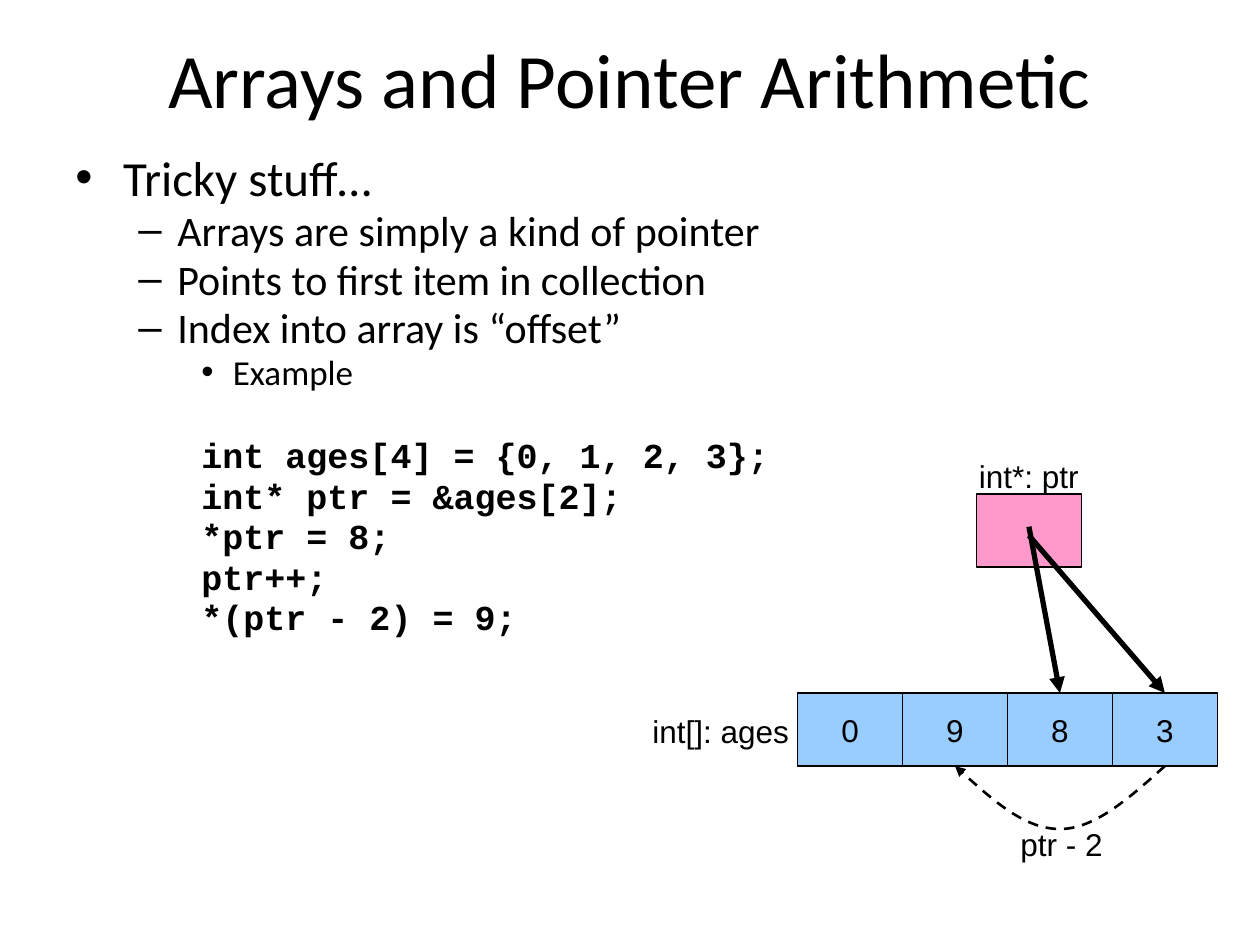
import pptx
import pptx.util
import pptx.dml.color
import pptx.enum.dml
import pptx.enum.shapes
import pptx.enum.text
import pptx.oxml
import pptx.oxml.ns

Inches = pptx.util.Inches
Pt = pptx.util.Pt
qn = pptx.oxml.ns.qn
ALIGN = pptx.enum.text.PP_ALIGN
ANCHOR = pptx.enum.text.MSO_ANCHOR

BLACK = pptx.dml.color.RGBColor(0x00, 0x00, 0x00)
BLUE = pptx.dml.color.RGBColor(0x99, 0xCC, 0xFF)
PINK = pptx.dml.color.RGBColor(0xFF, 0x99, 0xCC)

TITLE_FONT = {"name": "Calibri", "size": Pt(44)}
DIAGRAM_FONT = {"name": "Arial", "size": Pt(18)}
CODE_FONT = {"name": "Courier New", "size": Pt(20), "bold": True}

# Per level: left margin, hanging indent, bullet, font
LEVELS = [
    (0.38, 0.38, "•", {"name": "Calibri", "size": Pt(28)}),
    (0.81, 0.31, "–", {"name": "Calibri", "size": Pt(24)}),
    (1.25, 0.25, "•", {"name": "Calibri", "size": Pt(20)}),
]
POINTS = [
    (0, "Tricky stuff…"),
    (1, "Arrays are simply a kind of pointer"),
    (1, "Points to first item in collection"),
    (1, "Index into array is “offset”"),
    (2, "Example"),
]
CODE = [
    "int ages[4] = {0, 1, 2, 3};",
    "int* ptr = &ages[2];",
    "*ptr = 8;",
    "ptr++;",
    "*(ptr - 2) = 9;",
]
AGES = ["0", "9", "8", "3"]
CELL_WIDTH, CELL_HEIGHT = 0.833, 0.58


def add_run(paragraph, text, font_format):
    run = paragraph.add_run()
    run.text = text
    run.font.color.rgb = BLACK
    for attribute, value in font_format.items():
        setattr(run.font, attribute, value)


def add_frame(slide, left, top, width, height):
    frame = slide.shapes.add_textbox(
        Inches(left), Inches(top), Inches(width), Inches(height)).text_frame
    frame.word_wrap = True
    return frame


def add_title(slide, left, top, width, height):
    frame = add_frame(slide, left, top, width, height)
    frame.vertical_anchor = ANCHOR.MIDDLE
    frame.paragraphs[0].alignment = ALIGN.CENTER
    add_run(frame.paragraphs[0], "Arrays and Pointer Arithmetic", TITLE_FONT)


def format_outline(paragraph, level, bulleted):
    """Set the indent, spacing and bullet of one outline paragraph."""
    margin, hanging, bullet, _ = LEVELS[level]
    paragraph.level = level
    paragraph.line_spacing = 0.8
    properties = paragraph._p.get_or_add_pPr()
    properties.set("marL", str(Inches(margin)))
    properties.set("indent", str(-Inches(hanging)))
    spacing = pptx.oxml.ns.nsdecls("a")
    properties.append(pptx.oxml.parse_xml(
        f'<a:spcBef {spacing}><a:spcPct val="20000"/></a:spcBef>'))
    if bulleted:
        properties.append(pptx.oxml.parse_xml(
            f'<a:buFont {spacing} typeface="Arial"/>'))
        properties.append(pptx.oxml.parse_xml(
            f'<a:buChar {spacing} char="{bullet}"/>'))
    else:
        properties.append(pptx.oxml.parse_xml(f'<a:buNone {spacing}/>'))


def add_outline(slide, left, top, width, height):
    frame = add_frame(slide, left, top, width, height)
    lines = [(level, text, LEVELS[level][3], True) for level, text in POINTS]
    lines += [(2, text, CODE_FONT, False) for text in CODE]
    for index, (level, text, font_format, bulleted) in enumerate(lines):
        paragraph = frame.add_paragraph() if index else frame.paragraphs[0]
        format_outline(paragraph, level, bulleted)
        add_run(paragraph, text, font_format)
        if index == len(POINTS):
            paragraph.space_before = Pt(28)


def add_label(slide, left, top, width, text):
    frame = add_frame(slide, left, top, width, 0.4)
    add_run(frame.paragraphs[0], text, DIAGRAM_FONT)


def add_cell(slide, left, top, fill, text=""):
    cell = slide.shapes.add_shape(
        pptx.enum.shapes.MSO_SHAPE.RECTANGLE,
        Inches(left), Inches(top), Inches(CELL_WIDTH), Inches(CELL_HEIGHT))
    cell.shadow.inherit = False
    cell.fill.solid()
    cell.fill.fore_color.rgb = fill
    cell.line.color.rgb = BLACK
    cell.line.width = Pt(0.75)
    if text:
        cell.text_frame.word_wrap = False
        cell.text_frame.vertical_anchor = ANCHOR.MIDDLE
        cell.text_frame.paragraphs[0].alignment = ALIGN.CENTER
        add_run(cell.text_frame.paragraphs[0], text, DIAGRAM_FONT)
    return cell


def style_arrow(line, width):
    line.color.rgb = BLACK
    line.width = Pt(width)
    line._get_or_add_ln().append(pptx.oxml.parse_xml(
        f'<a:tailEnd {pptx.oxml.ns.nsdecls("a")} type="triangle"/>'))


def add_pointer(slide, x, y, target):
    """Draw an arrow from a point to the top of the target cell."""
    arrow = slide.shapes.add_connector(
        pptx.enum.shapes.MSO_CONNECTOR.STRAIGHT,
        Inches(x), Inches(y), target.left + target.width // 2, target.top)
    arrow.end_connect(target, 0)
    style_arrow(arrow.line, 3)
    arrow._element.spPr.append(pptx.oxml.parse_xml(
        f'<a:effectLst {pptx.oxml.ns.nsdecls("a")}/>'))


def add_offset_arc(slide, left, top, width, depth):
    """Draw a dashed arrow that sags from the right end to the left end."""
    sixth = width / 6
    curve = [(left + sixth * step, top + depth * drop)
             for step, drop in [(5, 0.5), (4, 1), (3, 1), (2, 1), (1, 0.5), (0, 0)]]
    builder = slide.shapes.build_freeform(
        Inches(left + width), Inches(top), scale=1.0)
    builder.add_line_segments(
        [(Inches(x), Inches(y)) for x, y in curve], close=False)
    arc = builder.convert_to_shape()
    segments = list(arc._element.iter(qn("a:lnTo")))
    for start in range(0, len(segments), 3):
        bezier = pptx.oxml.parse_xml(
            f'<a:cubicBezTo {pptx.oxml.ns.nsdecls("a")}/>')
        segments[start].addprevious(bezier)
        for segment in segments[start:start + 3]:
            bezier.append(segment[0])
            segment.getparent().remove(segment)
    arc.shadow.inherit = False
    arc.fill.background()
    arc.line.dash_style = pptx.enum.dml.MSO_LINE.DASH
    style_arrow(arc.line, 1.5)


def add_memory_diagram(slide, left, top):
    """Place the array, with its pointer above and its offset arc below."""
    array_left, array_top = left + 1.25, top + 1.92
    ages = [add_cell(slide, array_left + index * CELL_WIDTH, array_top, BLUE, age)
            for index, age in enumerate(AGES)]
    add_label(slide, left, array_top + 0.1, 1.33, "int[]: ages")

    pointer_left, pointer_top = left + 2.67, top + 0.34
    add_cell(slide, pointer_left, pointer_top, PINK)
    add_label(slide, left + 2.59, top, 1.08, "int*: ptr")
    pointer_middle = pointer_left + CELL_WIDTH / 2
    add_pointer(slide, pointer_middle, pointer_top + 0.26, ages[2])
    add_pointer(slide, pointer_middle, pointer_top + 0.33, ages[3])

    add_offset_arc(slide, array_left + 1.5 * CELL_WIDTH,
                   array_top + CELL_HEIGHT, 2 * CELL_WIDTH, 0.5)
    add_label(slide, left + 2.92, array_top + 1, 0.92, "ptr - 2")


def main():
    presentation = pptx.Presentation()
    presentation.slide_width = Inches(10)
    presentation.slide_height = Inches(7.5)
    slide = presentation.slides.add_slide(presentation.slide_layouts[6])
    add_title(slide, 0.5, 0.23, 9, 0.77)
    add_outline(slide, 0.5, 1.21, 9, 5.49)
    add_memory_diagram(slide, 5.08, 3.58)
    presentation.save("out.pptx")


if __name__ == "__main__":
    main()
